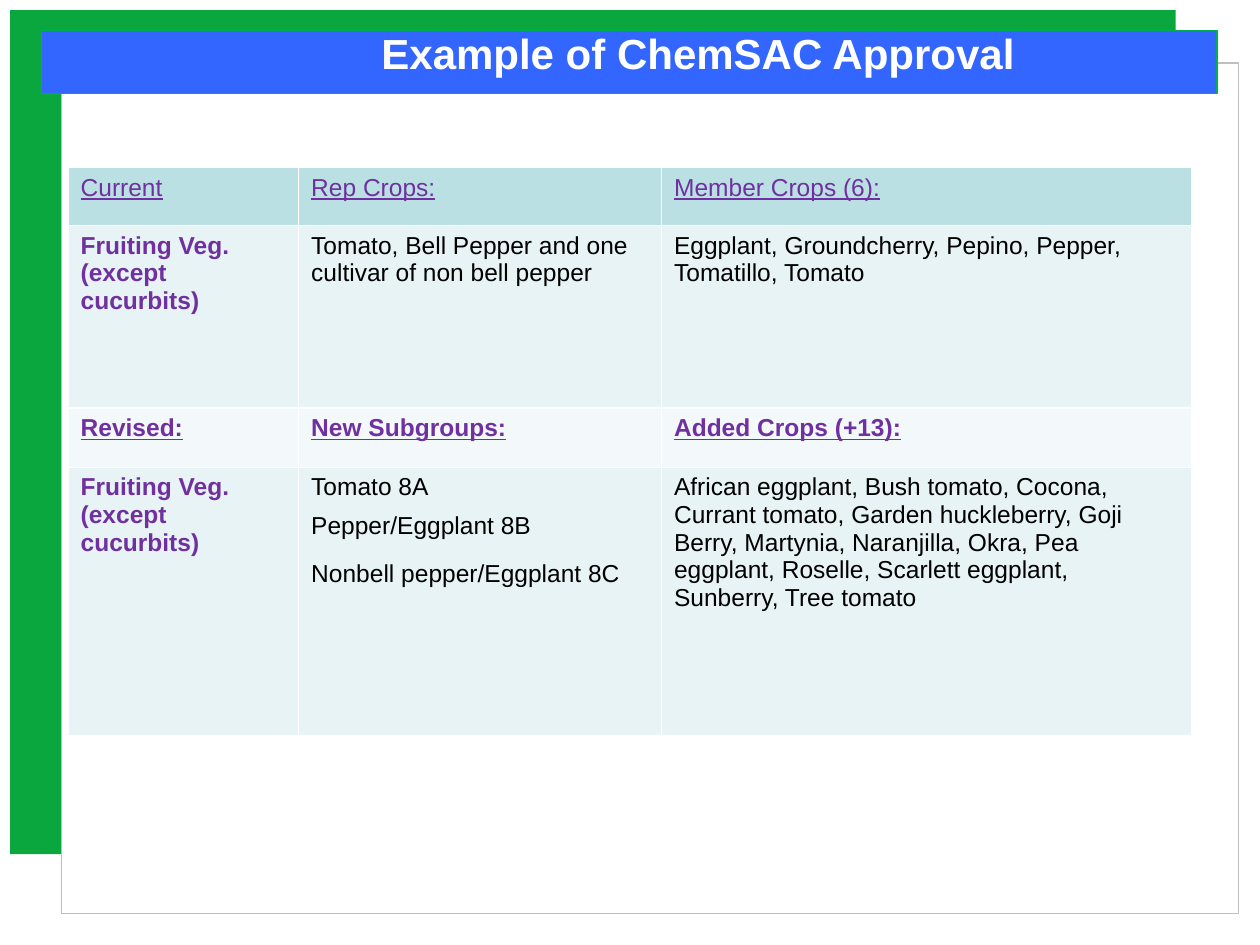
"""Builds the slide showing an example of ChemSAC approval."""
from lxml.etree import SubElement
from pptx import Presentation
from pptx.dml.color import RGBColor
from pptx.enum.shapes import MSO_SHAPE
from pptx.enum.text import MSO_ANCHOR, PP_ALIGN
from pptx.oxml.ns import qn
from pptx.util import Inches, Pt

WHITE = RGBColor(0xFF, 0xFF, 0xFF)
BLACK = RGBColor(0x00, 0x00, 0x00)
GREEN = RGBColor(0x09, 0xA7, 0x3E)
EDGE_GREEN = RGBColor(0x00, 0xB0, 0x50)
GRAY = RGBColor(0xBF, 0xBF, 0xBF)
BLUE = RGBColor(0x33, 0x66, 0xFF)
PURPLE = RGBColor(0x70, 0x30, 0xA0)
HEADER_FILL = RGBColor(0xBB, 0xE0, 0xE3)
BODY_FILL = RGBColor(0xE7, 0xF3, 0xF4)
SUBHEADER_FILL = RGBColor(0xF3, 0xF9, 0xFA)

COLUMN_WIDTHS = [1.83, 2.88, 4.21]
ROW_HEIGHTS = [0.46, 1.45, 0.47, 2.13]
ROW_FILLS = [HEADER_FILL, BODY_FILL, SUBHEADER_FILL, BODY_FILL]
SUBGROUP_GAPS = [6, 12, 0]
CROP_ROWS = [
    ["Current", "Rep Crops:", "Member Crops (6):"],
    ["Fruiting Veg. (except cucurbits)",
     "Tomato, Bell Pepper and one cultivar of non bell pepper",
     "Eggplant, Groundcherry, Pepino, Pepper, Tomatillo, Tomato"],
    ["Revised:", "New Subgroups:", "Added Crops (+13):"],
    ["Fruiting Veg. (except cucurbits)",
     "Tomato 8A\nPepper/Eggplant 8B\nNonbell pepper/Eggplant 8C",
     "African eggplant, Bush tomato, Cocona, Currant tomato, Garden huckleberry, "
     "Goji Berry, Martynia, Naranjilla, Okra, Pea eggplant, Roselle, "
     "Scarlett eggplant, Sunberry, Tree tomato"],
]


class SlideBuilder:
    """Holds the text style and the current slide."""

    def __init__(self, slide, font_name="Arial"):
        self.slide = slide
        self.font_name = font_name

    def format_text(self, text_frame, size, color, bold=False, underline=False):
        for paragraph in text_frame.paragraphs:
            for run in paragraph.runs:
                run.font.name = self.font_name
                run.font.size = Pt(size)
                run.font.color.rgb = color
                run.font.bold = bold
                run.font.underline = underline

    def add_rectangle(self, left, top, width, height, fill, line=None):
        shape = self.slide.shapes.add_shape(
            MSO_SHAPE.RECTANGLE, Inches(left), Inches(top), Inches(width), Inches(height))
        shape.shadow.inherit = False
        shape.fill.solid()
        shape.fill.fore_color.rgb = fill
        if line is None:
            shape.line.fill.background()
        else:
            shape.line.color.rgb = line
            shape.line.width = Pt(0.75)

    def add_title(self, text, left, top, width, height):
        text_frame = self.slide.shapes.add_textbox(
            Inches(left), Inches(top), Inches(width), Inches(height)).text_frame
        text_frame.word_wrap = False
        text_frame.vertical_anchor = MSO_ANCHOR.MIDDLE
        text_frame.text = text
        text_frame.paragraphs[0].alignment = PP_ALIGN.CENTER
        self.format_text(text_frame, 24, WHITE, bold=True)

    def add_borders(self, cell, color, width):
        properties = cell._tc.get_or_add_tcPr()
        for position, side in enumerate(("a:lnL", "a:lnR", "a:lnT", "a:lnB")):
            border = SubElement(properties, qn(side), w=str(Pt(width)))
            properties.insert(position, border)
            fill = SubElement(border, qn("a:solidFill"))
            SubElement(fill, qn("a:srgbClr"), val=str(color))

    def add_crop_table(self, left, top):
        table = self.slide.shapes.add_table(
            len(ROW_HEIGHTS), len(COLUMN_WIDTHS), Inches(left), Inches(top),
            Inches(sum(COLUMN_WIDTHS)), Inches(sum(ROW_HEIGHTS))).table
        for column, width in zip(table.columns, COLUMN_WIDTHS):
            column.width = Inches(width)
        for row_index, texts in enumerate(CROP_ROWS):
            table.rows[row_index].height = Inches(ROW_HEIGHTS[row_index])
            is_heading = row_index % 2 == 0
            for column_index, text in enumerate(texts):
                cell = table.cell(row_index, column_index)
                cell.fill.solid()
                cell.fill.fore_color.rgb = ROW_FILLS[row_index]
                self.add_borders(cell, WHITE, 1)
                cell.text_frame.text = text
                is_label = is_heading or column_index == 0
                self.format_text(
                    cell.text_frame, 14, PURPLE if is_label else BLACK,
                    bold=is_label and row_index > 0, underline=is_heading)
        subgroups = table.cell(3, 1).text_frame.paragraphs
        for paragraph, gap in zip(subgroups, SUBGROUP_GAPS):
            paragraph.space_after = Pt(gap)


def main():
    presentation = Presentation()
    presentation.slide_width = Inches(10)
    presentation.slide_height = Inches(7.5)
    builder = SlideBuilder(presentation.slides.add_slide(presentation.slide_layouts[6]))
    builder.add_rectangle(0.08, 0.08, 9.25, 6.7, GREEN)
    builder.add_rectangle(0.49, 0.5, 9.34, 6.75, WHITE, GRAY)
    builder.add_rectangle(0.33, 0.24, 9.33, 0.5, BLUE, EDGE_GREEN)
    builder.add_title("Example of ChemSAC Approval", 1.83, 0.17, 7.42, 0.5)
    builder.add_crop_table(0.54, 1.33)
    presentation.save("out.pptx")


if __name__ == "__main__":
    main()
